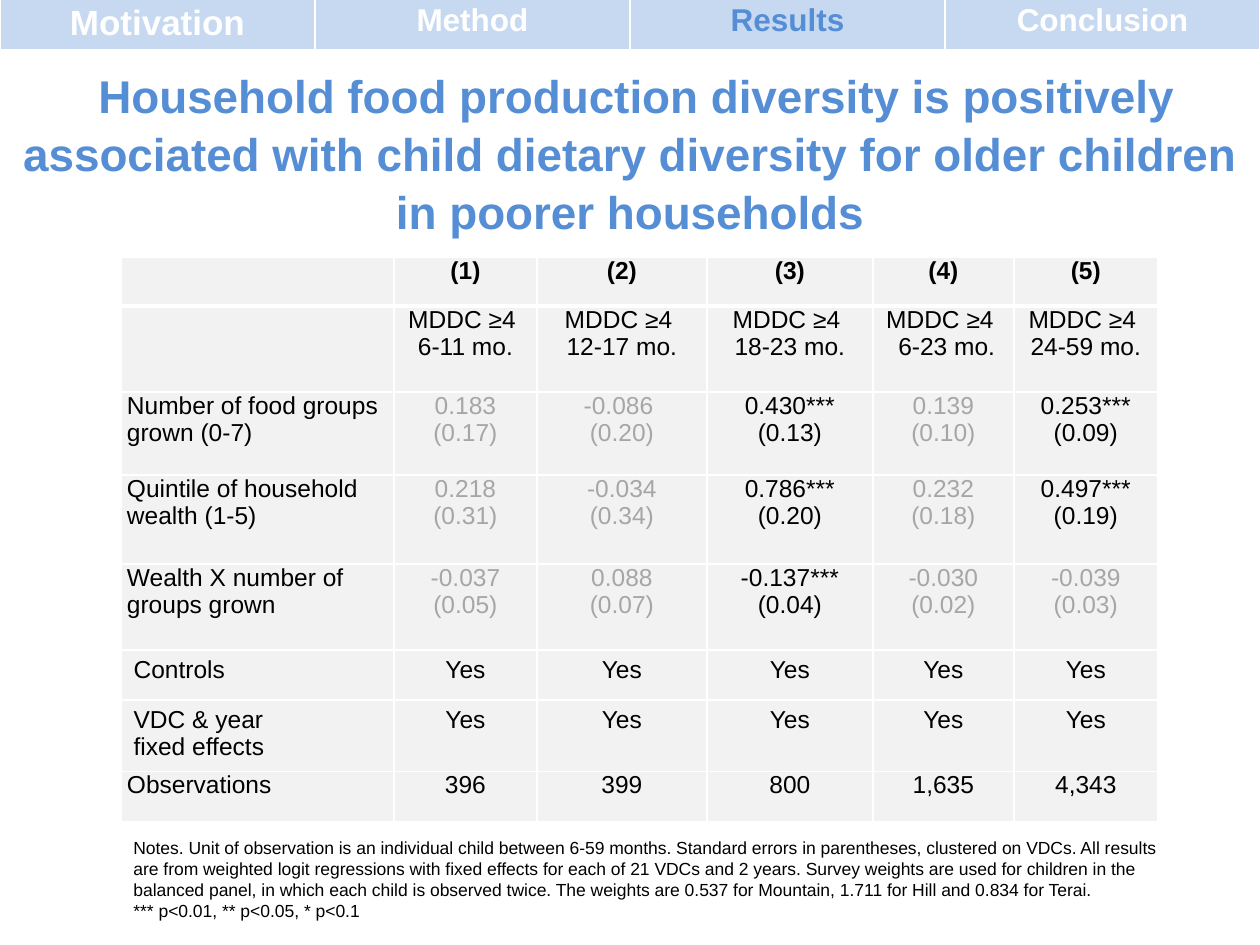
import pptx
import pptx.dml.color
import pptx.enum.text
import pptx.oxml
import pptx.oxml.ns
import pptx.util
from dataclasses import dataclass

EMU_PER_PX = 914400 / 126
ALIGN = pptx.enum.text.PP_ALIGN
ANCHOR = pptx.enum.text.MSO_ANCHOR


@dataclass(frozen=True)
class Theme:
    font: str = "Arial"
    accent: str = "558ED5"
    tab: str = "C6D9F1"
    cell: str = "F2F2F2"
    white: str = "FFFFFF"
    ink: str = "000000"
    muted: str = "A6A6A6"
    title_size: float = 26.2
    first_tab_size: int = 20
    tab_size: int = 18
    body_size: int = 14
    small_size: int = 10


THEME = Theme()

TABS = ["Motivation", "Method", "Results", "Conclusion"]
TITLE = ("Household food production diversity is positively associated with "
         "child dietary diversity for older children in poorer households")
COLUMNS = [273, 143, 170, 166, 141, 144]
ROWS = [49, 86, 83, 89, 86, 50, 69, 50]
PADDED_ROWS = (5, 6)
AGES = ["6-11", "12-17", "18-23", " 6-23", "24-59"]
RESULTS = [
    [""] + [f"({model})" for model in range(1, 6)],
    [""] + [f"MDDC ≥4 \n{age} mo." for age in AGES],
    ["Number of food groups grown (0-7)", "0.183\n(0.17)", "-0.086 \n(0.20)",
     "0.430***\n(0.13)", "0.139\n(0.10)", "0.253***\n(0.09)"],
    ["Quintile of household wealth (1-5)", "0.218\n(0.31)", "-0.034\n(0.34)",
     "0.786***\n(0.20)", "0.232\n(0.18)", "0.497***\n(0.19)"],
    ["Wealth X number of groups grown", "-0.037\n(0.05)", "0.088\n(0.07)",
     "-0.137***\n(0.04)", "-0.030\n(0.02)", "-0.039\n(0.03)"],
    ["Controls"] + ["Yes"] * 5,
    ["VDC & year\nfixed effects"] + ["Yes"] * 5,
    ["Observations", "396", "399", "800", "1,635", "4,343"],
]
FOOTNOTE = (
    "Notes. Unit of observation is an individual child between 6-59 months. "
    "Standard errors in parentheses, clustered on VDCs. All results are from "
    "weighted logit regressions with fixed effects for each of 21 VDCs and 2 "
    "years. Survey weights are used for children in the balanced panel, in "
    "which each child is observed twice. The weights are 0.537 for Mountain, "
    "1.711 for Hill and 0.834 for Terai.\n*** p<0.01, ** p<0.05, * p<0.1")


def px(length):
    return pptx.util.Emu(round(length * EMU_PER_PX))


def rgb(color):
    return pptx.dml.color.RGBColor.from_string(color)


def write(frame, text, size, color, bold=False, align=ALIGN.CENTER):
    frame.text = text
    for paragraph in frame.paragraphs:
        paragraph.alignment = align
        paragraph.font.name = THEME.font
        paragraph.font.size = pptx.util.Pt(size)
        paragraph.font.bold = bold
        paragraph.font.color.rgb = rgb(color)


def add_text(slide, box, text, size, color, **style):
    frame = slide.shapes.add_textbox(*map(px, box)).text_frame
    frame.word_wrap = True
    write(frame, text, size, color, **style)
    return frame


def add_grid(slide, left, top, columns, rows):
    grid = slide.shapes.add_table(len(rows), len(columns), px(left), px(top),
                                  px(sum(columns)), px(sum(rows))).table
    grid.first_row = grid.horz_banding = False
    for column, width in zip(grid.columns, columns):
        column.width = px(width)
    for row, height in zip(grid.rows, rows):
        row.height = px(height)
    return grid


def style_cell(cell, fill, bottom=1, top=1):
    # Borders go before the fill in the cell properties
    properties = cell._tc.get_or_add_tcPr()
    for side, width in (("L", 1), ("R", 1), ("T", top), ("B", bottom)):
        properties.append(pptx.oxml.parse_xml(
            f'<a:ln{side} {pptx.oxml.ns.nsdecls("a")} w="{width * 12700}">'
            f'<a:solidFill><a:srgbClr val="{THEME.white}"/></a:solidFill>'
            f'</a:ln{side}>'))
    cell.fill.solid()
    cell.fill.fore_color.rgb = rgb(fill)


def add_navigation(slide):
    tabs = add_grid(slide, 0, -3, [315] * len(TABS), [52])
    for index, name in enumerate(TABS):
        cell = tabs.cell(0, index)
        size = THEME.tab_size if index else THEME.first_tab_size
        color = THEME.accent if name == "Results" else THEME.white
        write(cell.text_frame, name, size, color, bold=True)
        style_cell(cell, THEME.tab, bottom=3)


def add_title(slide):
    frame = add_text(slide, (0, 79, 1260, 146), " " + TITLE,
                     THEME.title_size, THEME.accent, bold=True)
    frame.vertical_anchor = ANCHOR.MIDDLE
    frame.paragraphs[0].line_spacing = 1.05


def add_results(slide):
    grid = add_grid(slide, 121, 257, COLUMNS, ROWS)
    for row, values in enumerate(RESULTS):
        for column, text in enumerate(values):
            cell = grid.cell(row, column)
            if row not in PADDED_ROWS:
                cell.margin_left = cell.margin_right = px(6)
                cell.margin_top = cell.margin_bottom = 0
            # Coefficients without stars are greyed out
            is_coefficient = 2 <= row <= 4 and column > 0
            muted = is_coefficient and "***" not in text
            write(cell.text_frame, text, THEME.body_size,
                  THEME.muted if muted else THEME.ink, bold=row == 0,
                  align=ALIGN.CENTER if column else ALIGN.LEFT)
            style_cell(cell, THEME.cell, bottom=3 if row == 0 else 1,
                       top=3 if row == 1 else 1)


def main():
    presentation = pptx.Presentation()
    presentation.slide_width, presentation.slide_height = px(1260), px(945)
    slide = presentation.slides.add_slide(presentation.slide_layouts[6])
    add_title(slide)
    add_navigation(slide)
    add_results(slide)
    # Footnote under the results
    add_text(slide, (121, 831, 1066, 97), FOOTNOTE, THEME.small_size,
             THEME.ink, align=ALIGN.LEFT)
    presentation.save("out.pptx")


if __name__ == "__main__":
    main()
